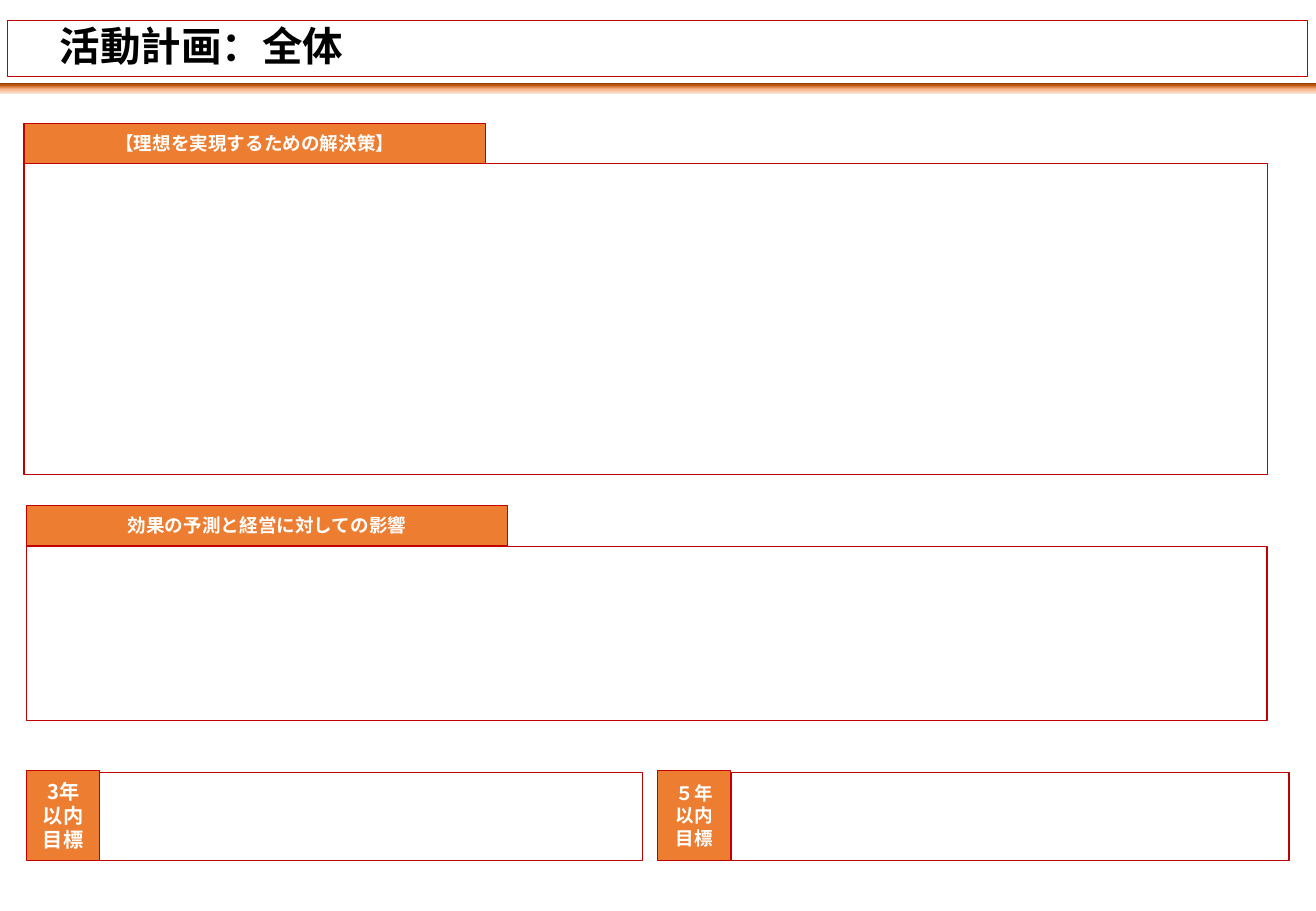
"""Build the overall activity plan slide."""
import pptx
import pptx.util
import pptx.enum.shapes
import pptx.enum.text
import pptx.dml.color
import pptx.oxml
import pptx.oxml.ns
import lxml.etree

Pt = pptx.util.Pt
RGB = pptx.dml.color.RGBColor.from_string
ALIGN = pptx.enum.text.PP_ALIGN

THEME = {
    "font": "Noto Sans CJK JP",
    "border": "C00000", "panel": "FFFFFF", "label": "ED7D31",
    "title_text": "000000", "label_text": "FFFFFF",
    "band": [(0, "843C0B"), (25, "C55A11"), (56, "F4B183"), (79, "F8CBAD"), (100, "FBE5D6")],
    "title_size": 24, "label_size": 11, "goal_size": 12, "line": 0.75,
}


def add_box(s, box, fill=None):
    """Add a bordered rectangle at box (left, top, width, height)."""
    sp = s.shapes.add_shape(pptx.enum.shapes.MSO_SHAPE.RECTANGLE, *map(Pt, box))
    sp.shadow.inherit = False
    if fill:
        sp.fill.solid()
        sp.fill.fore_color.rgb = RGB(fill)
    else:
        sp.fill.background()
    sp.line.color.rgb = RGB(THEME["border"])
    sp.line.width = Pt(THEME["line"])
    return sp


def write_text(sp, text, size, color, align):
    """Fill a shape with bold text, one paragraph per line."""
    tf = sp.text_frame
    tf.text = text
    tf.word_wrap = True
    tf.vertical_anchor = pptx.enum.text.MSO_ANCHOR.MIDDLE
    for p in tf.paragraphs:
        p.alignment = align
        for r in p.runs:
            r.font.size = Pt(size)
            r.font.bold = True
            r.font.name = THEME["font"]
            r.font.color.rgb = RGB(color)
            ea = lxml.etree.SubElement(r.font._element, pptx.oxml.ns.qn("a:ea"))
            ea.set("typeface", THEME["font"])


prs = pptx.Presentation()
prs.slide_width, prs.slide_height = Pt(780), Pt(540)
s = prs.slides.add_slide(prs.slide_layouts[6])

title = add_box(s, (4.3, 12.2, 770.6, 33.2))
write_text(title, "\u3000活動計画：全体".replace("\u3000", "　"), THEME["title_size"],
           THEME["title_text"], ALIGN.LEFT)
title.text_frame.paragraphs[0].line_spacing = 0.9

panels = [
    (14.2, 97, 737, 184.4),
    (15.8, 324, 735.2, 103),
    (59.2, 458, 321.6, 52),
    (433.4, 458, 330.6, 52),
]
for box in panels:
    add_box(s, box, THEME["panel"])

labels = [
    ((14.2, 73.2, 273.8, 23.8), "【理想を実現するための解決策】", THEME["label_size"]),
    ((15.8, 299.6, 285.2, 23.8), "効果の予測と経営に対しての影響", THEME["label_size"]),
    ((15.8, 456.6, 43.4, 53.4), "3年以内\n目標", THEME["goal_size"]),
    ((389.8, 456.6, 43.4, 53.4), "５年以内\n目標", THEME["label_size"]),
]
for box, text, size in labels:
    sp = add_box(s, box, THEME["label"])
    write_text(sp, text, size, THEME["label_text"], ALIGN.CENTER)

stops = "".join(
    f'<a:gs pos="{pos * 1000}"><a:srgbClr val="{color}"/></a:gs>' for pos, color in THEME["band"])
gradient = (f'<a:gradFill {pptx.oxml.ns.nsdecls("a")} rotWithShape="1"><a:gsLst>{stops}</a:gsLst>'
            '<a:lin ang="5400000" scaled="0"/></a:gradFill>')
for left, right in [(199.4, 780), (0, 199.4)]:
    band = add_box(s, (left, 49, right - left, 6.6))
    band.line.fill.background()
    no_fill = band._element.spPr.find(pptx.oxml.ns.qn("a:noFill"))
    band._element.spPr.replace(no_fill, pptx.oxml.parse_xml(gradient))

prs.save("out.pptx")
